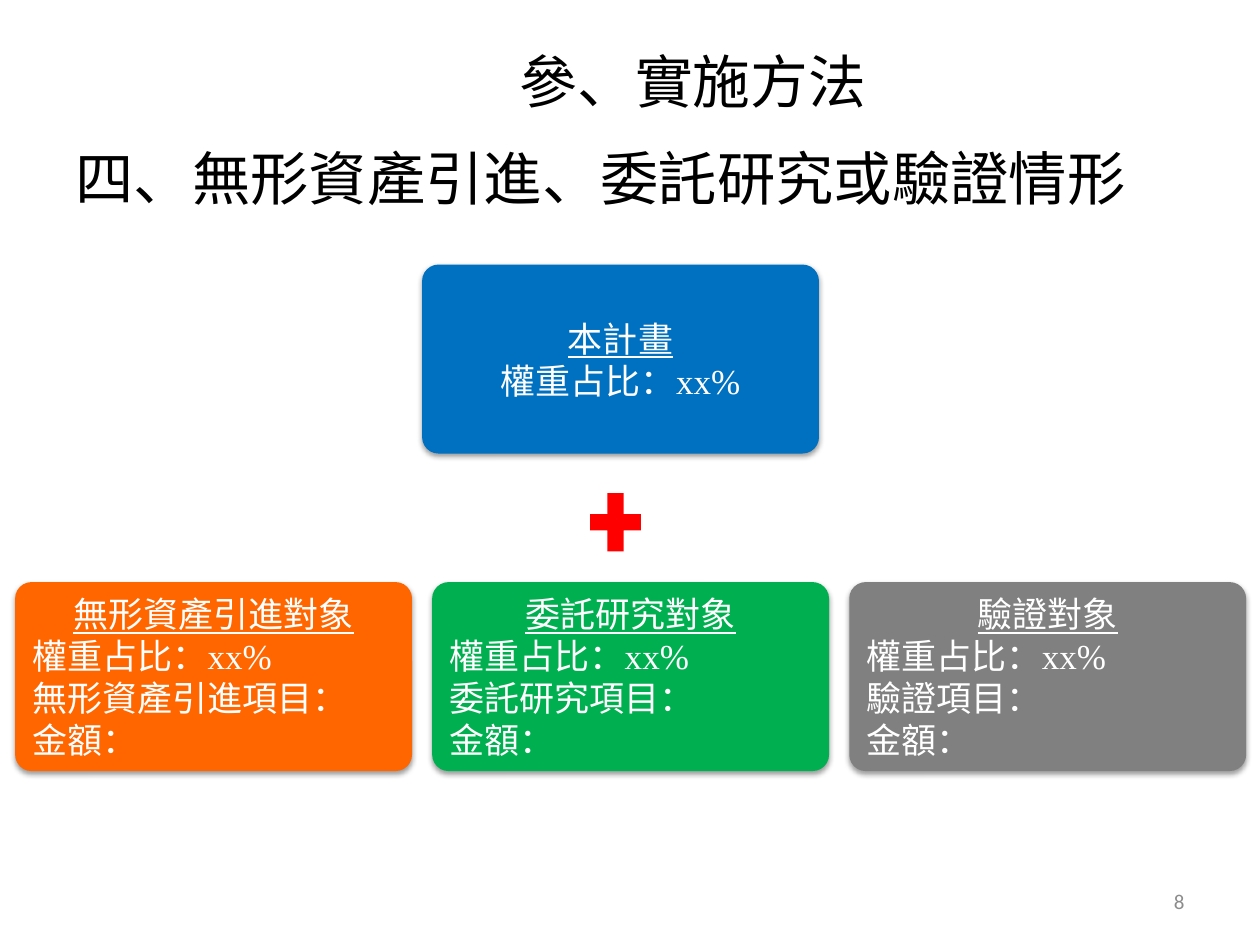
from dataclasses import dataclass

from lxml import etree
from pptx import Presentation
from pptx.dml.color import RGBColor
from pptx.enum.shapes import MSO_SHAPE
from pptx.enum.text import MSO_ANCHOR, MSO_AUTO_SIZE, PP_ALIGN
from pptx.oxml.ns import qn
from pptx.util import Inches, Pt

CARD_SHAPE = MSO_SHAPE.ROUNDED_RECTANGLE
PLUS_SHAPE = MSO_SHAPE.MATH_PLUS
LEFT, CENTER, RIGHT = PP_ALIGN.LEFT, PP_ALIGN.CENTER, PP_ALIGN.RIGHT
MIDDLE = MSO_ANCHOR.MIDDLE
NO_AUTOFIT = MSO_AUTO_SIZE.NONE


@dataclass(frozen=True)
class Theme:
    heading_font: str = "Noto Sans CJK SC"
    card_font: str = "Times New Roman"
    number_font: str = "Calibri"
    title_size: float = 33
    subtitle_size: float = 33.3
    card_size: float = 20
    number_size: float = 12
    black: str = "000000"
    white: str = "FFFFFF"
    number_gray: str = "8C8C8C"
    blue: str = "0070C0"
    orange: str = "FF6600"
    green: str = "00B050"
    gray: str = "808080"
    red: str = "FF0000"


class SlideBuilder:
    def __init__(self, slide, theme):
        self.slide = slide
        self.theme = theme

    def style(self, paragraph, font_name, size, color, align):
        paragraph.alignment = align
        font = paragraph.font
        font.name, font.size = font_name, Pt(size)
        font.color.rgb = RGBColor.from_string(color)

    def heading(self, placeholder, text, box, size, align):
        placeholder.left, placeholder.top, placeholder.width, placeholder.height = map(Inches, box)
        frame = placeholder.text_frame
        frame.text = text
        frame.auto_size = NO_AUTOFIT
        paragraph = frame.paragraphs[0]
        # Plain heading: no bullet, no hanging indent, no space before
        properties = paragraph._p.get_or_add_pPr()
        properties.set("marL", "0")
        properties.set("indent", "0")
        paragraph.space_before = Pt(0)
        etree.SubElement(properties, qn("a:buNone"))
        self.style(paragraph, self.theme.heading_font, size, self.theme.black, align)

    def solid(self, preset, box, color):
        shape = self.slide.shapes.add_shape(preset, *map(Inches, box))
        shape.shadow.inherit = False
        shape.fill.solid()
        shape.fill.fore_color.rgb = RGBColor.from_string(color)
        shape.line.fill.background()
        return shape

    def drop_shadow(self, shape):
        effects = shape._element.spPr.find(qn("a:effectLst"))
        shadow = etree.SubElement(
            effects, qn("a:outerShdw"), blurRad=str(Pt(3.1)), dist=str(Pt(1.6)),
            dir="5400000", rotWithShape="0")
        color = etree.SubElement(shadow, qn("a:srgbClr"), val=self.theme.black)
        etree.SubElement(color, qn("a:alpha"), val="38000")

    def card(self, box, color, heading, details, detail_align=LEFT):
        card = self.solid(CARD_SHAPE, box, color)
        card.adjustments[0] = 0.087
        self.drop_shadow(card)
        frame = card.text_frame
        frame.word_wrap = True
        frame.vertical_anchor = MIDDLE
        frame.text = "\n".join([heading, *details])
        for index, paragraph in enumerate(frame.paragraphs):
            self.style(paragraph, self.theme.card_font, self.theme.card_size,
                       self.theme.white, detail_align if index else CENTER)
            paragraph.font.underline = index == 0

    def page_number(self, text, box):
        frame = self.slide.shapes.add_textbox(*map(Inches, box)).text_frame
        frame.word_wrap = True
        frame.vertical_anchor = MIDDLE
        frame.text = text
        self.style(frame.paragraphs[0], self.theme.number_font,
                   self.theme.number_size, self.theme.number_gray, RIGHT)


def main():
    theme = Theme()
    presentation = Presentation()
    presentation.slide_width, presentation.slide_height = Inches(10), Inches(7.5)
    slide = presentation.slides.add_slide(presentation.slide_layouts[1])
    builder = SlideBuilder(slide, theme)

    # Headings
    title, subtitle = slide.placeholders
    builder.heading(title, "參、實施方法", (1.12, 0.13, 8.76, 1.01), theme.title_size, CENTER)
    builder.heading(subtitle, "四、無形資產引進、委託研究或驗證情形",
                    (0.5, 1.08, 9, 0.86), theme.subtitle_size, LEFT)

    # This project, plus its partners
    card_width, card_height = 3.15, 1.5
    weight = "權重占比：xx%"
    builder.card((3.35, 2.1, card_width, card_height), theme.blue, "本計畫", [weight], CENTER)
    builder.solid(PLUS_SHAPE, (4.61, 3.83, 0.55, 0.63), theme.red)

    # Row of partner cards
    partners = [("無形資產引進", theme.orange), ("委託研究", theme.green), ("驗證", theme.gray)]
    row_left, row_top, gap = 0.12, 4.62, 0.16
    for column, (activity, color) in enumerate(partners):
        left = row_left + column * (card_width + gap)
        builder.card((left, row_top, card_width, card_height), color,
                     f"{activity}對象", [weight, f"{activity}項目：", "金額："])

    # Page number
    builder.page_number("8", (7.17, 6.95, 2.33, 0.4))

    presentation.save("out.pptx")


if __name__ == "__main__":
    main()
